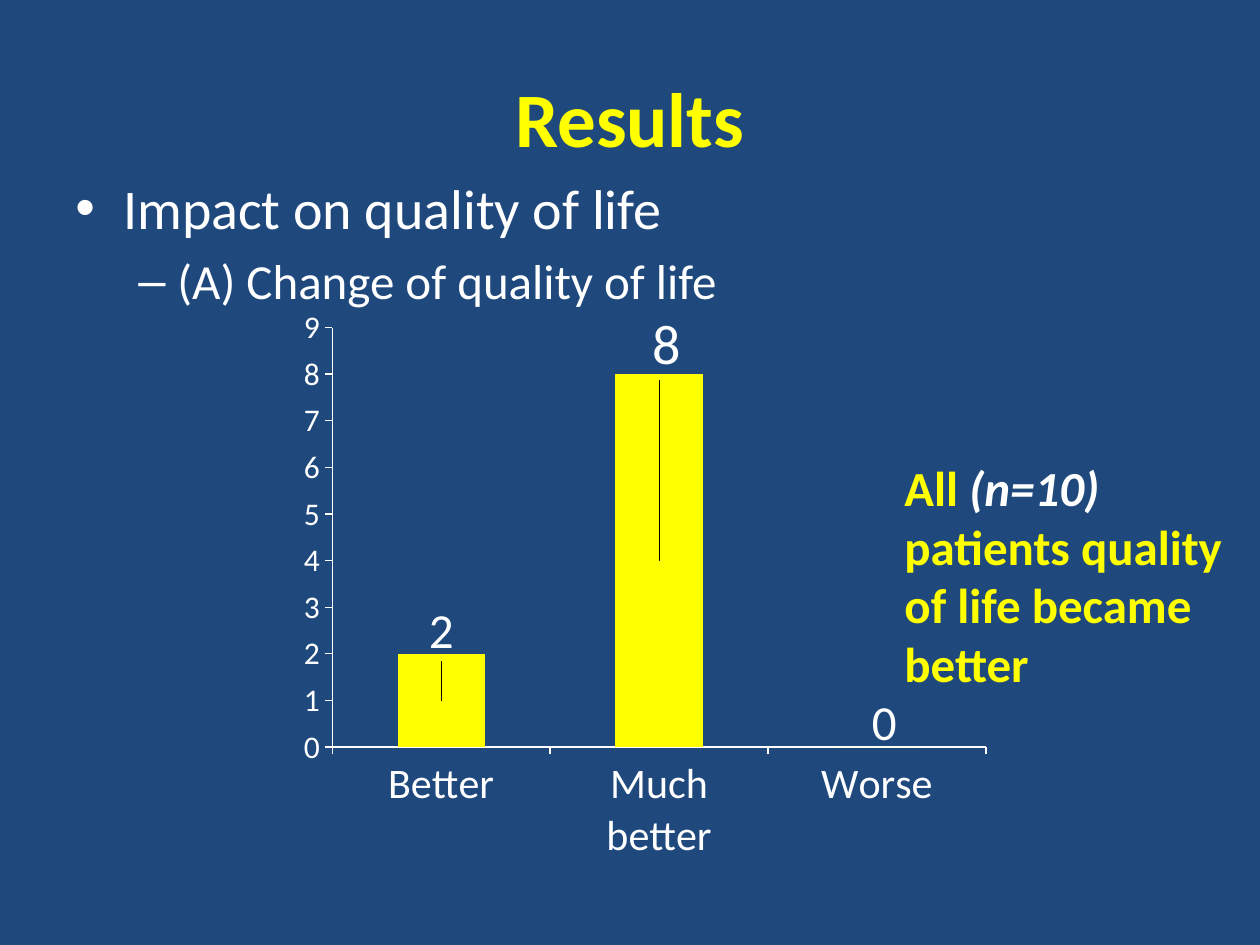
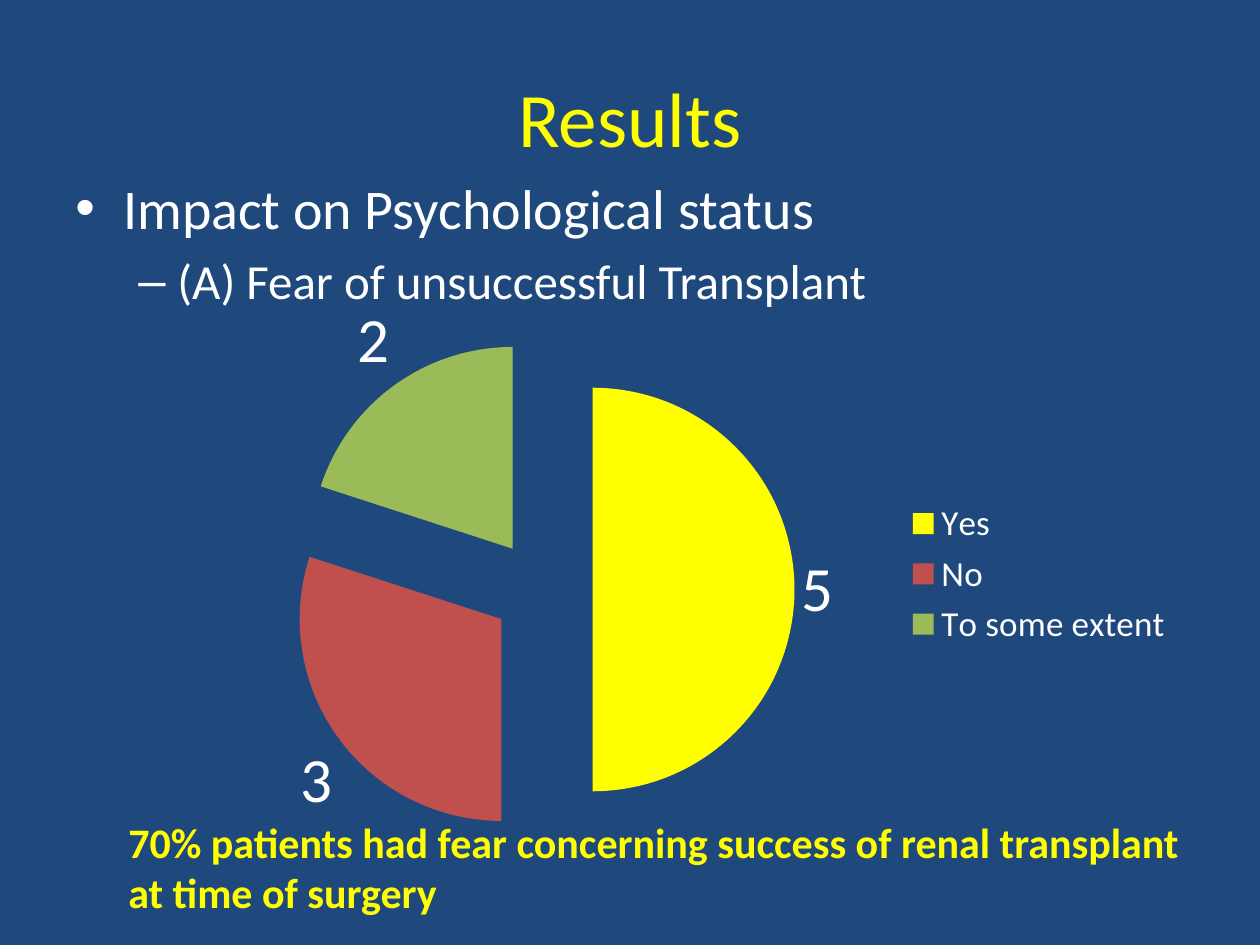
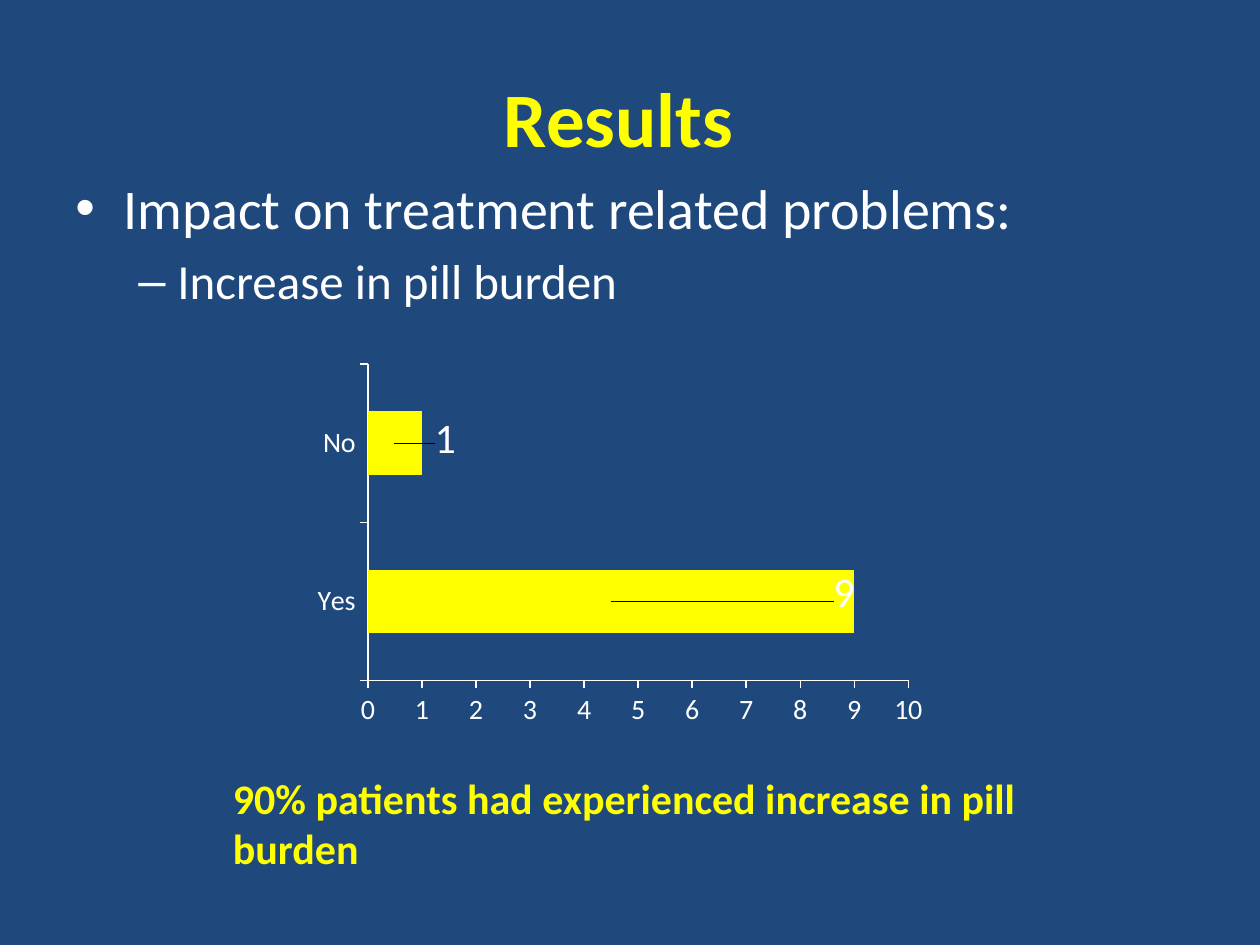
from lxml import etree
from pptx import Presentation
from pptx.chart.data import CategoryChartData
from pptx.dml.color import RGBColor
from pptx.enum.chart import XL_CHART_TYPE as ChartType
from pptx.enum.chart import XL_LABEL_POSITION as LabelPosition
from pptx.enum.chart import XL_LEGEND_POSITION as LegendPosition
from pptx.enum.text import MSO_ANCHOR as Anchor
from pptx.enum.text import PP_ALIGN as Align
from pptx.oxml.ns import qn
from pptx.util import Inches, Pt

FONT = "Calibri"
NAVY, YELLOW, WHITE = "1F497D", "FFFF00", "FFFFFF"
RED, GREEN = "C0504D", "9BBB59"
TITLE_BOX = (0.5, 0.3, 9, 1.25)
OUTLINE_BOX = (0.5, 1.33, 9, 1.25)
# bullet character, left margin, hanging indent, text size
OUTLINE_LEVELS = [("•", 0.38, 0.38, 32), ("–", 0.81, 0.31, 28)]


def color(hex_string):
    return RGBColor.from_string(hex_string)


def set_font(font, size, hex_string=WHITE, bold=None, italic=None):
    font.name, font.size = FONT, Pt(size)
    font.bold, font.italic = bold, italic
    font.color.rgb = color(hex_string)


def add_text_frame(slide, box, anchor=Anchor.TOP):
    frame = slide.shapes.add_textbox(*map(Inches, box)).text_frame
    frame.word_wrap = True
    frame.vertical_anchor = anchor
    return frame


def add_text(paragraph, text, **text_format):
    run = paragraph.add_run()
    run.text = text
    set_font(run.font, **text_format)


def set_bullet(paragraph, character, margin, hanging):
    properties = paragraph._p.get_or_add_pPr()
    properties.set("marL", str(Inches(margin)))
    properties.set("indent", str(-Inches(hanging)))
    etree.SubElement(properties, qn("a:buFont")).set("typeface", "Arial")
    etree.SubElement(properties, qn("a:buChar")).set("char", character)


def add_heading(slide, title, outline, bold=True):
    """Title and the two bulleted lines below it."""
    paragraph = add_text_frame(slide, TITLE_BOX, Anchor.MIDDLE).paragraphs[0]
    paragraph.alignment = Align.CENTER
    add_text(paragraph, title, size=44, hex_string=YELLOW, bold=bold)

    frame = add_text_frame(slide, OUTLINE_BOX)
    for level, (text, style) in enumerate(zip(outline, OUTLINE_LEVELS)):
        character, margin, hanging, size = style
        paragraph = frame.add_paragraph() if level else frame.paragraphs[0]
        paragraph.level = level
        paragraph.space_before = Pt(0.2 * size)
        set_bullet(paragraph, character, margin, hanging)
        add_text(paragraph, text, size=size)


def add_finding(slide, box, pieces, size=24):
    """Bold conclusion; pieces are (text, colour, italic)."""
    paragraph = add_text_frame(slide, box).paragraphs[0]
    for text, hex_string, italic in pieces:
        add_text(paragraph, text, size=size, hex_string=hex_string,
                 bold=True, italic=italic)


def add_chart(slide, box, chart_type, categories, values):
    data = CategoryChartData()
    data.categories = categories
    data.add_series("Series 1", values)
    chart = slide.shapes.add_chart(chart_type, *map(Inches, box), data).chart
    set_font(chart.font, 10)
    chart.has_title = False
    chart.has_legend = False
    return chart


def make_layout(target=None, **values):
    """Manual chart layout, as fractions of the chart's size."""
    layout = etree.Element(qn("c:layout"))
    manual = etree.SubElement(layout, qn("c:manualLayout"))
    if target:
        etree.SubElement(manual, qn("c:layoutTarget")).set("val", target)
        for mode in ("xMode", "yMode"):
            etree.SubElement(manual, qn("c:" + mode)).set("val", "edge")
    for name, value in values.items():
        etree.SubElement(manual, qn("c:" + name)).set("val", str(value))
    return layout


def style_axis(axis, size):
    set_font(axis.tick_labels.font, size)
    axis.has_major_gridlines = False
    axis.format.line.color.rgb = color(WHITE)
    axis.format.line.width = Pt(0.75)


def add_bar_chart(slide, box, chart_type, categories, values, axis_sizes,
                  maximum, labels):
    """Yellow bars; labels are (size, x shift, y shift) for each bar."""
    chart = add_chart(slide, box, chart_type, categories, values)
    style_axis(chart.category_axis, axis_sizes[0])
    style_axis(chart.value_axis, axis_sizes[1])
    chart.value_axis.minimum_scale = 0
    chart.value_axis.maximum_scale = maximum
    chart.value_axis.major_unit = 1

    plot = chart.plots[0]
    plot.gap_width, plot.overlap = 150, 100
    plot.vary_by_categories = False
    series = plot.series[0]
    series.format.fill.solid()
    series.format.fill.fore_color.rgb = color(YELLOW)
    for index, (size, _, _) in enumerate(labels):
        set_font(series.points[index].data_label.font, size)
    for label, (_, x, y) in zip(series._element.iter(qn("c:dLbl")), labels):
        label.insert(1, make_layout(x=x, y=y))
    return chart


def add_pie_chart(slide, box, categories, values, slice_colors):
    chart = add_chart(slide, box, ChartType.PIE, categories, values)
    chart.has_legend = True
    chart.legend.position = LegendPosition.RIGHT
    chart.legend.include_in_layout = False
    set_font(chart.legend.font, 20)

    plot = chart.plots[0]
    plot.vary_by_categories = True
    plot.has_data_labels = True
    plot.data_labels.show_value = True
    plot.data_labels.show_percentage = False
    plot.data_labels.position = LabelPosition.OUTSIDE_END
    set_font(plot.data_labels.font, 36)
    series = plot.series[0]
    for index, hex_string in enumerate(slice_colors):
        fill = series.points[index].format.fill
        fill.solid()
        fill.fore_color.rgb = color(hex_string)
    explosion = etree.Element(qn("c:explosion"))
    explosion.set("val", "25")
    series._element.find(qn("c:dPt")).addprevious(explosion)
    for point in series._element.iter(qn("c:dPt")):
        slice_explosion = etree.Element(qn("c:explosion"))
        slice_explosion.set("val", "25")
        point.find(qn("c:spPr")).addprevious(slice_explosion)


def build_quality_of_life(slide):
    add_heading(slide, "Results", ["Impact on quality of life",
                                   "(A) Change of quality of life"])
    chart = add_bar_chart(
        slide, (2.17, 2.42, 5.83, 4.5), ChartType.COLUMN_STACKED,
        ["Better", "Much better", "Worse"], [2, 8, 0],
        axis_sizes=(24, 18), maximum=9,
        labels=[(28, 0, -0.12), (32, 0.01, -0.38), (28, 0.01, -0.04)])
    plot_area = chart._chartSpace.chart.plotArea
    for layout in plot_area.findall(qn("c:layout")):
        plot_area.remove(layout)
    plot_area.insert(0, make_layout("inner", x=0.08, y=0.04, w=0.89, h=0.74))
    add_finding(slide, (7.08, 3.58, 2.92, 1.99), [
        ("All ", YELLOW, False), ("(n=10) ", WHITE, True),
        ("patients quality of life became better", YELLOW, False)], size=28)


def build_psychological_status(slide):
    add_heading(slide, "Results", ["Impact on Psychological status",
                                   "(A) Fear of unsuccessful Transplant"],
                bold=False)
    add_pie_chart(slide, (1.67, 2.08, 7.75, 4.95),
                  ["Yes", "No", "To some extent"], [5, 3, 2],
                  [YELLOW, RED, GREEN])
    add_finding(slide, (0.92, 6.43, 8.58, 0.91), [
        ("70% patients had fear concerning success of renal transplant "
         "at time of surgery", YELLOW, False)])


def build_pill_burden(slide):
    add_heading(slide, "Results\t", ["Impact on treatment related problems:",
                                     "Increase in pill burden"])
    add_bar_chart(
        slide, (2.42, 2.83, 5, 3), ChartType.BAR_STACKED,
        ["Yes", "No"], [9, 1], axis_sizes=(16, 16), maximum=10,
        labels=[(24, 0.37, -0.02), (24, 0.08, -0.01)])
    add_finding(slide, (1.75, 6.08, 7.42, 0.91), [
        ("90% patients had experienced increase in pill burden",
         YELLOW, False)])


def main():
    presentation = Presentation()
    presentation.slide_width = Inches(10)
    presentation.slide_height = Inches(7.5)
    background = presentation.slide_master.background.fill
    background.solid()
    background.fore_color.rgb = color(NAVY)
    blank = presentation.slide_layouts[6]
    for build in (build_quality_of_life, build_psychological_status,
                  build_pill_burden):
        build(presentation.slides.add_slide(blank))
    presentation.save("out.pptx")


if __name__ == "__main__":
    main()
